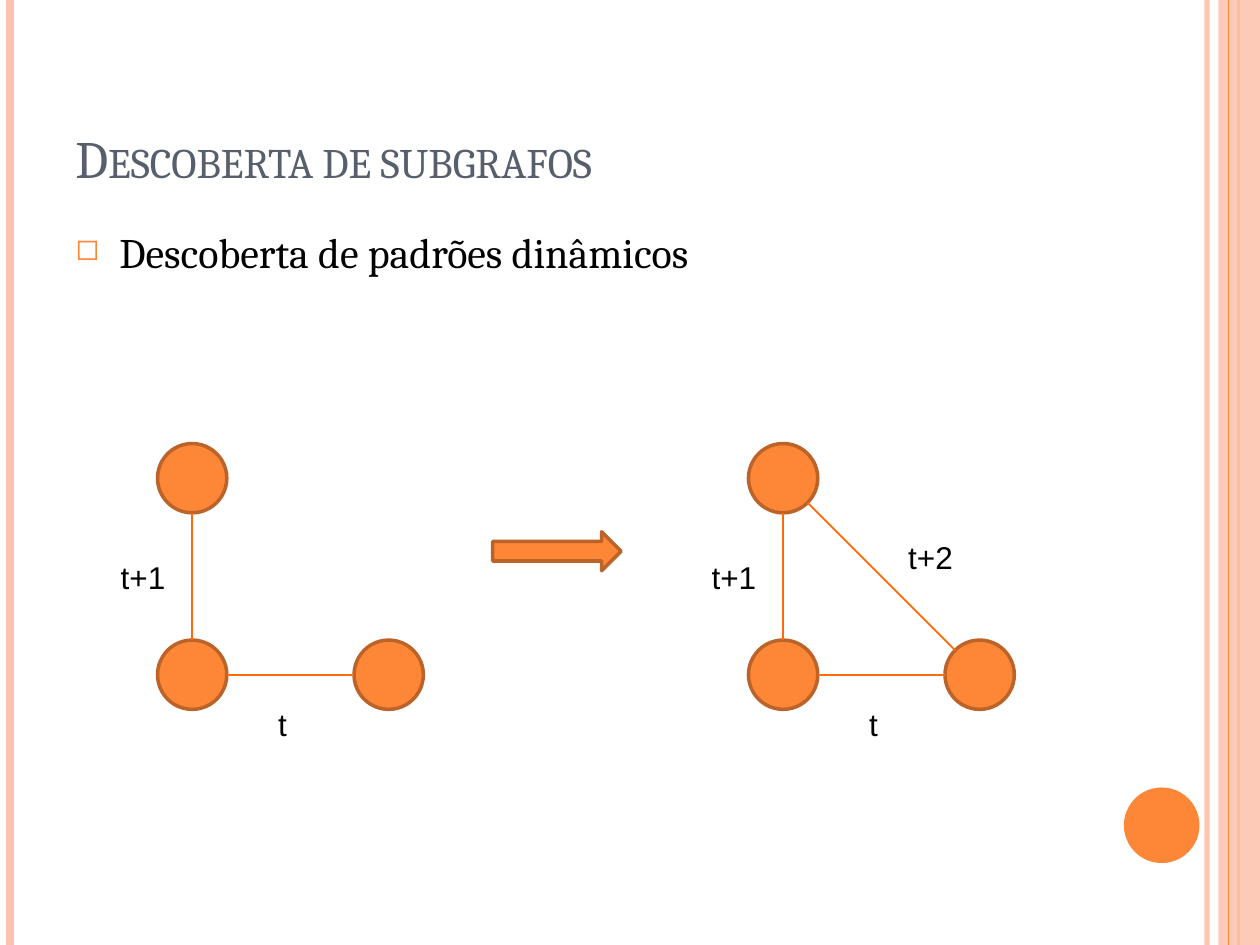
from math import sqrt

from lxml.etree import SubElement
from pptx import Presentation
from pptx.dml.color import RGBColor
from pptx.enum.shapes import MSO_CONNECTOR, MSO_SHAPE
from pptx.enum.text import MSO_ANCHOR, MSO_AUTO_SIZE
from pptx.oxml.ns import qn
from pptx.util import Inches, Pt

ORANGE = "FE8637"
DARK_ORANGE = "BC6329"
EDGE_ORANGE = "FF6B0A"
PEACH = "FEC3AE"
SLATE = "575F6D"
BLACK = "000000"

SLIDE_HEIGHT = 7.5
NODE_SIZE = 0.55
NODE_GAP = 1.56


def color(hex_string):
    return RGBColor.from_string(hex_string)


def set_opacity(fill, percent):
    color_element = fill._xPr.find(qn("a:solidFill"))[0]
    SubElement(color_element, qn("a:alpha"), val=str(percent * 1000))


class SlideBuilder:
    heading_font = "Cambria"
    label_font = "Arial"

    def __init__(self, slide):
        self.slide = slide

    def line(self, start, end, line_color, width, opacity=100):
        points = [Inches(value) for value in (*start, *end)]
        connector = self.slide.shapes.add_connector(MSO_CONNECTOR.STRAIGHT, *points)
        connector.line.color.rgb = color(line_color)
        connector.line.width = Pt(width)
        if opacity < 100:
            set_opacity(connector.line.fill, opacity)
        SubElement(connector._element.spPr, qn("a:effectLst"))

    def shape(self, kind, left, top, width, height, fill_color, line_color=None, opacity=100):
        shape = self.slide.shapes.add_shape(
            kind, Inches(left), Inches(top), Inches(width), Inches(height))
        shape.shadow.inherit = False
        shape.fill.solid()
        shape.fill.fore_color.rgb = color(fill_color)
        if opacity < 100:
            set_opacity(shape.fill, opacity)
        if line_color:
            shape.line.color.rgb = color(line_color)
            shape.line.width = Pt(2)
        else:
            shape.line.fill.background()

    def text(self, text, left, top, width, height, size, font, text_color=BLACK,
             wrap=True, anchor=MSO_ANCHOR.TOP):
        box = self.slide.shapes.add_textbox(
            Inches(left), Inches(top), Inches(width), Inches(height))
        frame = box.text_frame
        frame.word_wrap = wrap
        frame.vertical_anchor = anchor
        frame.auto_size = MSO_AUTO_SIZE.NONE if wrap else MSO_AUTO_SIZE.SHAPE_TO_FIT_TEXT
        paragraph = frame.paragraphs[0]
        run = paragraph.add_run()
        run.text = text
        run.font.size = Pt(size)
        run.font.name = font
        run.font.color.rgb = color(text_color)
        return paragraph

    def title(self, text):
        paragraph = self.text(text, 0.5, 0.3, 8.17, 1.25, 30, self.heading_font, SLATE,
                              anchor=MSO_ANCHOR.BOTTOM)
        paragraph.runs[0].font._element.set("cap", "small")

    def bullet(self, text):
        paragraph = self.text(text, 0.5, 1.75, 8.17, 5.33, 24, self.heading_font)
        paragraph.space_before = Pt(6)
        properties = paragraph._p.get_or_add_pPr()
        properties.set("marL", str(Inches(0.35)))
        properties.set("indent", str(Inches(-0.35)))
        bullet_color = SubElement(properties, qn("a:buClr"))
        SubElement(bullet_color, qn("a:srgbClr"), val=ORANGE)
        SubElement(properties, qn("a:buSzPct"), val="70000")
        SubElement(properties, qn("a:buChar"), char="◻")

    def label(self, text, left, top, width=0.56):
        self.text(text, left, top, width, 0.4, 18, self.label_font, wrap=False)

    def node(self, left, top):
        self.shape(MSO_SHAPE.OVAL, left, top, NODE_SIZE, NODE_SIZE, ORANGE, DARK_ORANGE)

    def edge(self, start, end):
        self.line(start, end, EDGE_ORANGE, 1)

    def graph(self, left, top, closed=False):
        radius = NODE_SIZE / 2
        right, bottom = left + NODE_GAP, top + NODE_GAP
        center_x, center_y = left + radius, bottom + radius
        for position in ((left, bottom), (left, top), (right, bottom)):
            self.node(*position)
        self.edge((center_x, bottom), (center_x, top + NODE_SIZE))
        self.edge((left + NODE_SIZE, center_y), (right, center_y))
        self.label("t", left + 0.86, top + 2.03, 0.27)
        self.label("t+1", left - 0.39, top + 0.86)
        if closed:
            reach = radius / sqrt(2)
            self.edge((center_x + reach, top + radius + reach),
                      (right + radius - reach, center_y - reach))
            self.label("t+2", left + 1.17, top + 0.7)


def main():
    presentation = Presentation()
    presentation.slide_width = Inches(10)
    presentation.slide_height = Inches(SLIDE_HEIGHT)
    slide = presentation.slides.add_slide(presentation.slide_layouts[6])
    builder = SlideBuilder(slide)

    # Side stripes and corner disc
    for x, stripe_color, width, opacity in (
            (9.58, PEACH, 3, 93), (0.08, PEACH, 4.5, 100), (9.83, ORANGE, 1.5, 100)):
        builder.line((x, 0), (x, SLIDE_HEIGHT), stripe_color, width, opacity)
    builder.shape(MSO_SHAPE.RECTANGLE, 9.67, 0, 0.33, SLIDE_HEIGHT, PEACH, opacity=87)
    builder.line((9.75, 0), (9.75, SLIDE_HEIGHT), ORANGE, 0.75)
    builder.shape(MSO_SHAPE.OVAL, 8.92, 6.25, 0.6, 0.6, ORANGE)

    # Title and bullet
    builder.title("Descoberta de subgrafos")
    builder.bullet("Descoberta de padrões dinâmicos")

    # Open graph growing into a closed one
    builder.graph(1.25, 3.52)
    builder.graph(5.94, 3.52, closed=True)
    builder.shape(MSO_SHAPE.RIGHT_ARROW, 3.91, 4.22, 1.02, 0.31, ORANGE, DARK_ORANGE)

    presentation.save("out.pptx")


if __name__ == "__main__":
    main()
